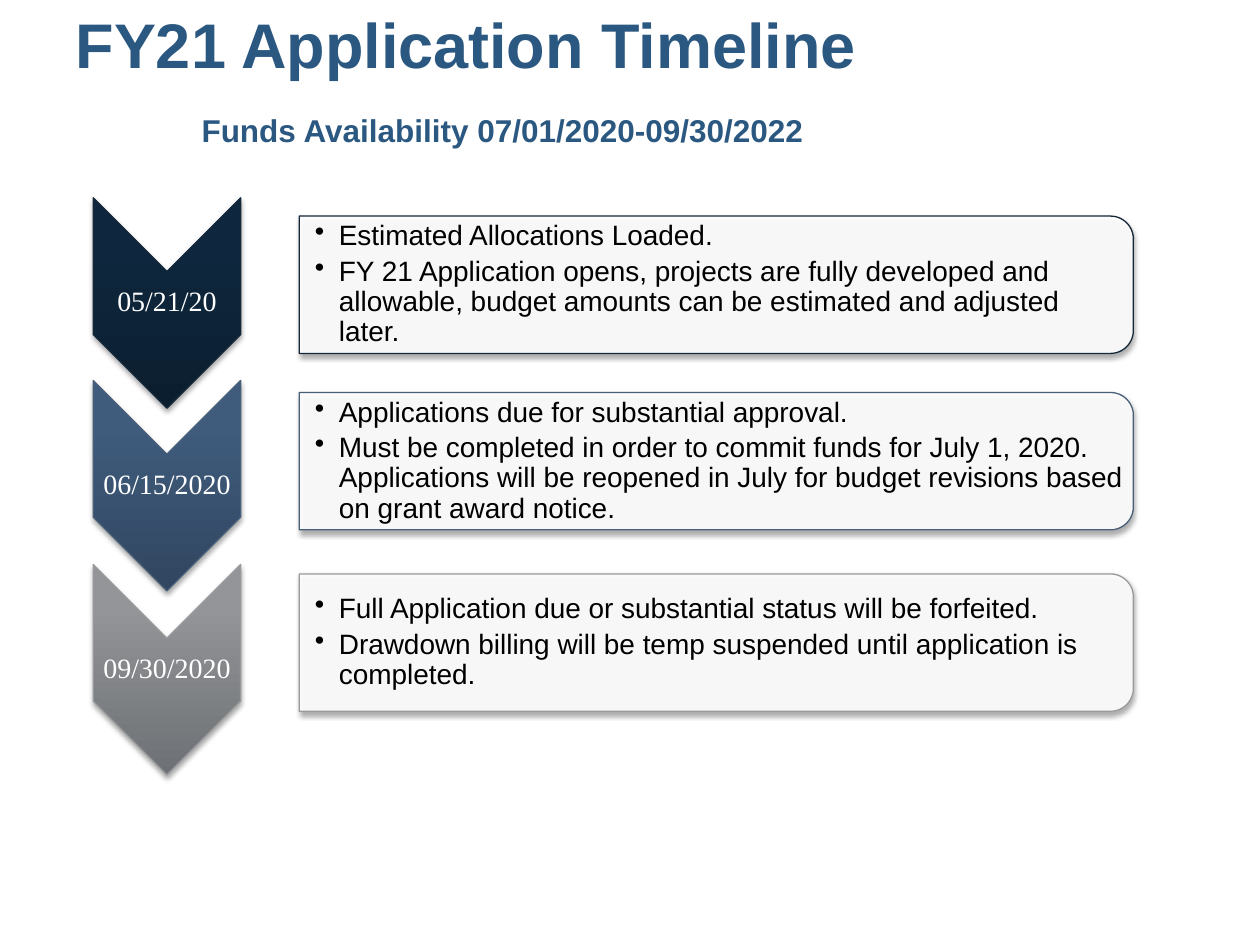
import pptx
import pptx.util
import pptx.oxml
import pptx.dml.color
import pptx.enum.shapes
import pptx.enum.text

Inches = pptx.util.Inches
Pt = pptx.util.Pt
Shape = pptx.enum.shapes.MSO_SHAPE
Anchor = pptx.enum.text.MSO_ANCHOR
Align = pptx.enum.text.PP_ALIGN
NS = 'xmlns:a="http://schemas.openxmlformats.org/drawingml/2006/main"'

colors = {"title": "2B5880", "date": "FFFFFF", "body": "000000", "panel": "FFFFFF"}
shadow = (
    f'<a:effectLst {NS}><a:outerShdw blurRad="40000" dist="23000" dir="5400000" '
    'rotWithShape="0"><a:srgbClr val="000000"><a:alpha val="35000"/></a:srgbClr>'
    '</a:outerShdw></a:effectLst>'
)
steps = [
    {"date": "05/21/20", "top": 1.82, "mid": 2.26, "line": "14283A",
     "grad": ["0B1E30", "0E273E", "0D273F"],
     "notes": ["Estimated Allocations Loaded.",
               "FY 21 Application opens, projects are fully developed and allowable, "
               "budget amounts can be estimated and adjusted later."]},
    {"date": "06/15/2020", "top": 3.27, "mid": 3.66, "line": "485F79",
     "grad": ["314660", "3F5C7D", "3E5C7E"],
     "notes": ["Applications due for substantial approval.",
               "Must be completed in order to commit funds for July 1, 2020. "
               "Applications will be reopened in July for budget revisions based "
               "on grant award notice."]},
    {"date": "09/30/2020", "top": 4.73, "mid": 5.1, "line": "999A9C",
     "grad": ["6D7074", "949598", "949699"],
     "notes": ["Full Application due or substantial status will be forfeited.",
               "Drawdown billing will be temp suspended until application is completed."]},
]


def add_form(kind, left, top, width, height, line):
    form = group.shapes.add_shape(
        kind, Inches(left), Inches(top), Inches(width), Inches(height))
    form.rotation = 90
    form.fill.solid()
    form.fill.fore_color.rgb = pptx.dml.color.RGBColor.from_string(colors["panel"])
    form.line.color.rgb = pptx.dml.color.RGBColor.from_string(line)
    form.line.width = Pt(0.75)
    form.element.spPr.append(pptx.oxml.parse_xml(shadow))
    return form, form.element.spPr.find(pptx.oxml.ns.qn("a:solidFill"))


def add_text(frame, texts, color, font, para):
    for i, text in enumerate(texts):
        p = frame.paragraphs[0] if i == 0 else frame.add_paragraph()
        p.text = text
        for key, value in para.items():
            setattr(p, key, value)
        if para.get("level"):
            props = p._p.get_or_add_pPr()
            props.set("marL", str(Inches(0.19)))
            props.set("indent", str(Inches(-0.19)))
            props.append(pptx.oxml.parse_xml(f'<a:buChar {NS} char="•"/>'))
        for run in p.runs:
            for key, value in font.items():
                setattr(run.font, key, value)
            run.font.color.rgb = pptx.dml.color.RGBColor.from_string(colors[color])


deck = pptx.Presentation()
deck.slide_width = Inches(10)
deck.slide_height = Inches(7.5)
slide = deck.slides.add_slide(deck.slide_layouts[5])

title = slide.shapes.title
title.left, title.top = Inches(0.5), Inches(0.3)
title.width, title.height = Inches(9), Inches(1.25)
frame = title.text_frame
style = {"word_wrap": True, "auto_size": pptx.enum.text.MSO_AUTO_SIZE.NONE,
         "vertical_anchor": Anchor.MIDDLE, "margin_bottom": Inches(0.68)}
for key, value in style.items():
    setattr(frame, key, value)
add_text(frame, ["FY21 Application Timeline", "Funds Availability 07/01/2020-09/30/2022"],
         "title", {"name": "Arial", "size": Pt(36), "bold": True},
         {"alignment": Align.LEFT, "space_before": Pt(0)})
funds = frame.paragraphs[1]
funds.space_before = Pt(17)
funds.runs[0].font.size = Pt(18)
funds._p.get_or_add_pPr().set("marL", str(Inches(1)))
funds._p.get_or_add_pPr().set("indent", "0")

group = slide.shapes.add_group_shape()
for step in steps:
    arrow, fill = add_form(Shape.CHEVRON, 0.49, step["top"], 1.67, 1.17, step["line"])
    stops = "".join(
        f'<a:gs pos="{pos}"><a:srgbClr val="{hue}"/></a:gs>'
        for pos, hue in zip((0, 80000, 100000), step["grad"]))
    arrow.element.spPr.replace(fill, pptx.oxml.parse_xml(
        f'<a:gradFill {NS} rotWithShape="0"><a:gsLst>{stops}</a:gsLst>'
        '<a:lin ang="16200000" scaled="0"/></a:gradFill>'))

    panel, fill = add_form(Shape.ROUND_2_SAME_RECTANGLE, 5.14, step["mid"] - 0.54,
                           1.09, 6.62, step["line"])
    panel.top = Inches(step["mid"] - 3.31)
    fill[0].append(pptx.oxml.parse_xml(f'<a:alpha {NS} val="90000"/>'))

    boxes = [
        ((0.74, step["top"] + 0.33, 1.17, 0.5), 0.01, [step["date"]], "date",
         "Times New Roman", {"alignment": Align.CENTER, "line_spacing": 0.9}),
        ((2.38, step["mid"] - 0.49, 6.57, 0.98), 0.12, step["notes"], "body",
         "Arial", {"level": 1, "line_spacing": 0.9, "space_after": Pt(3)}),
    ]
    for place, inset, texts, color, face, para in boxes:
        frame = group.shapes.add_textbox(*map(Inches, place)).text_frame
        style = {"word_wrap": True, "vertical_anchor": Anchor.MIDDLE,
                 "margin_left": Inches(inset), "margin_right": Inches(0.01),
                 "margin_top": Inches(0.01), "margin_bottom": Inches(0.01)}
        for key, value in style.items():
            setattr(frame, key, value)
        add_text(frame, texts, color, {"name": face, "size": Pt(16)}, para)

deck.save("out.pptx")
